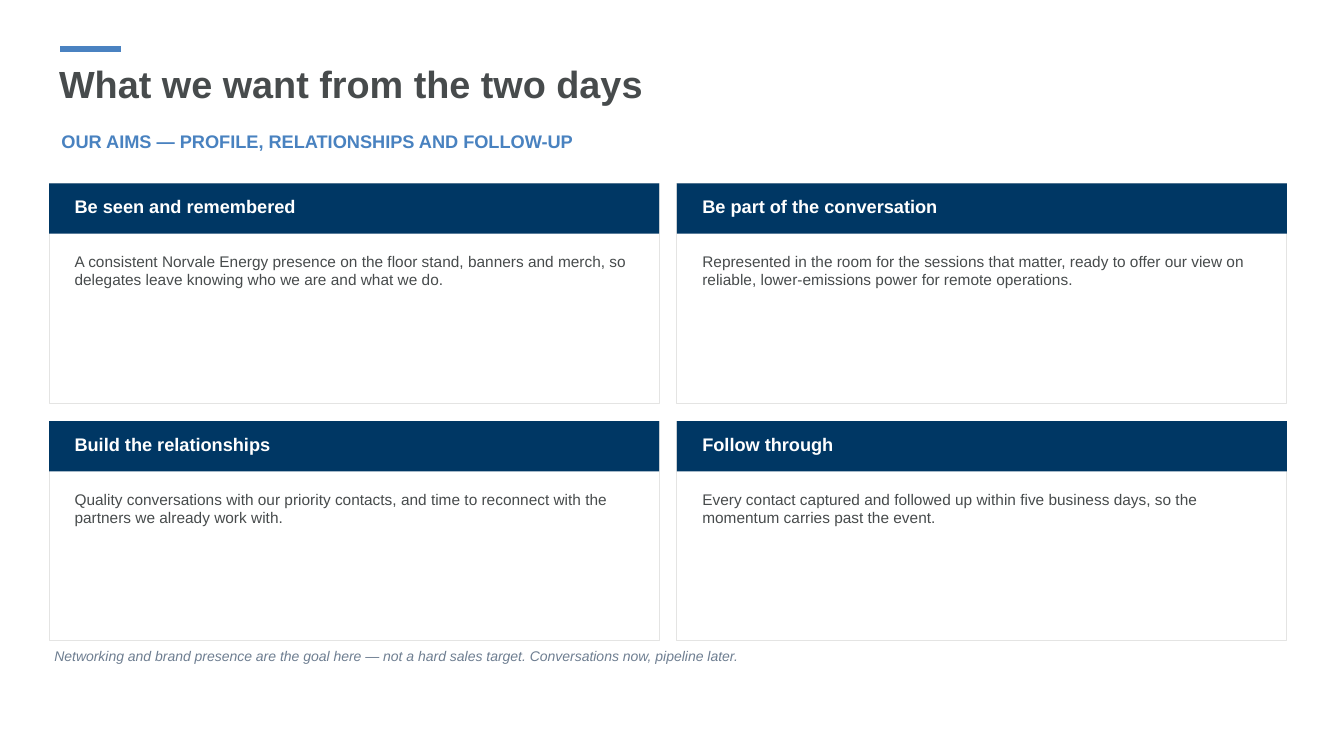
from lxml import etree
from pptx import Presentation
from pptx.dml.color import RGBColor
from pptx.enum.shapes import MSO_CONNECTOR, MSO_SHAPE
from pptx.enum.text import MSO_ANCHOR
from pptx.oxml.ns import qn
from pptx.util import Cm, Pt

RECTANGLE = MSO_SHAPE.RECTANGLE
STRAIGHT = MSO_CONNECTOR.STRAIGHT
TOP, MIDDLE = MSO_ANCHOR.TOP, MSO_ANCHOR.MIDDLE

WHITE, NAVY, BLUE = "FFFFFF", "003764", "4982C0"
CHARCOAL, SLATE, BORDER = "474B4C", "6E7E91", "E4E4E3"

AIMS = [
    ("Be seen and remembered",
     "A consistent Norvale Energy presence on the floor stand, banners and merch, "
     "so delegates leave knowing who we are and what we do."),
    ("Be part of the conversation",
     "Represented in the room for the sessions that matter, ready to offer our view "
     "on reliable, lower-emissions power for remote operations."),
    ("Build the relationships",
     "Quality conversations with our priority contacts, and time to reconnect with "
     "the partners we already work with."),
    ("Follow through",
     "Every contact captured and followed up within five business days, so the "
     "momentum carries past the event."),
]
LEFT, TOP_ROW = 1.24, 4.62
CARD_WIDTH, CARD_HEIGHT, HEADER_HEIGHT = 15.37, 5.54, 1.27
GAP = 0.45
PADDING = 0.51


def rgb(hex_color):
    return RGBColor.from_string(hex_color)


def add_text(box, text, size, color, bold=False, italic=False,
             inset=(0.13, 0.05), spacing=None, anchor=TOP):
    """Add a text box; box is left, top, width, height in cm."""
    frame = slide.shapes.add_textbox(*map(Cm, box)).text_frame
    frame.word_wrap = True
    frame.vertical_anchor = anchor
    frame.margin_left = frame.margin_right = Cm(inset[0])
    frame.margin_top = frame.margin_bottom = Cm(inset[1])
    frame.text = text
    paragraph = frame.paragraphs[0]
    paragraph.line_spacing = spacing
    font = paragraph.runs[0].font
    font.name, font.size = "Arial", Pt(size)
    font.bold, font.italic = bold, italic
    font.color.rgb = rgb(color)


prs = Presentation()
prs.slide_width, prs.slide_height = Cm(33.87), Cm(19.05)
slide = prs.slides.add_slide(prs.slide_layouts[6])

# Heading
accent = slide.shapes.add_connector(STRAIGHT, Cm(1.52), Cm(1.24), Cm(3.04), Cm(1.24))
accent.line.color.rgb = rgb("4A82C1")
accent.line.width = Pt(4.5)
etree.SubElement(accent._element.spPr, qn("a:effectLst"))

add_text((LEFT, 0.97, 26.8, 2.13), "What we want from the two days", 27, CHARCOAL,
         bold=True, inset=(0.25, 0.13), spacing=1.1, anchor=MIDDLE)
add_text((1.3, 3.1, 26.8, 1.12), "OUR AIMS — PROFILE, RELATIONSHIPS AND FOLLOW-UP",
         13, BLUE, bold=True, inset=(0.25, 0.13), spacing=1.1)

# Two by two cards
for index, (aim, detail) in enumerate(AIMS):
    row, column = divmod(index, 2)
    left = LEFT + column * (CARD_WIDTH + GAP)
    top = TOP_ROW + row * (CARD_HEIGHT + GAP)
    for height, fill, border in ((CARD_HEIGHT, WHITE, BORDER),
                                 (HEADER_HEIGHT, NAVY, None)):
        panel = slide.shapes.add_shape(RECTANGLE, Cm(left), Cm(top),
                                       Cm(CARD_WIDTH), Cm(height))
        panel.shadow.inherit = False
        panel.fill.solid()
        panel.fill.fore_color.rgb = rgb(fill)
        if border:
            panel.line.color.rgb = rgb(border)
            panel.line.width = Pt(0.75)
        else:
            panel.line.fill.background()
    text_left, text_width = left + PADDING, CARD_WIDTH - 2 * PADDING
    add_text((text_left, top + 0.25, text_width, 0.81), aim, 13, WHITE, bold=True)
    add_text((text_left, top + 1.68, text_width, 3.56), detail, 11, CHARCOAL)

# Closing note
add_text((LEFT, 16.26, 31.34, 0.76),
         "Networking and brand presence are the goal here — not a hard sales target. "
         "Conversations now, pipeline later.", 10, SLATE, italic=True)

prs.save("out.pptx")
